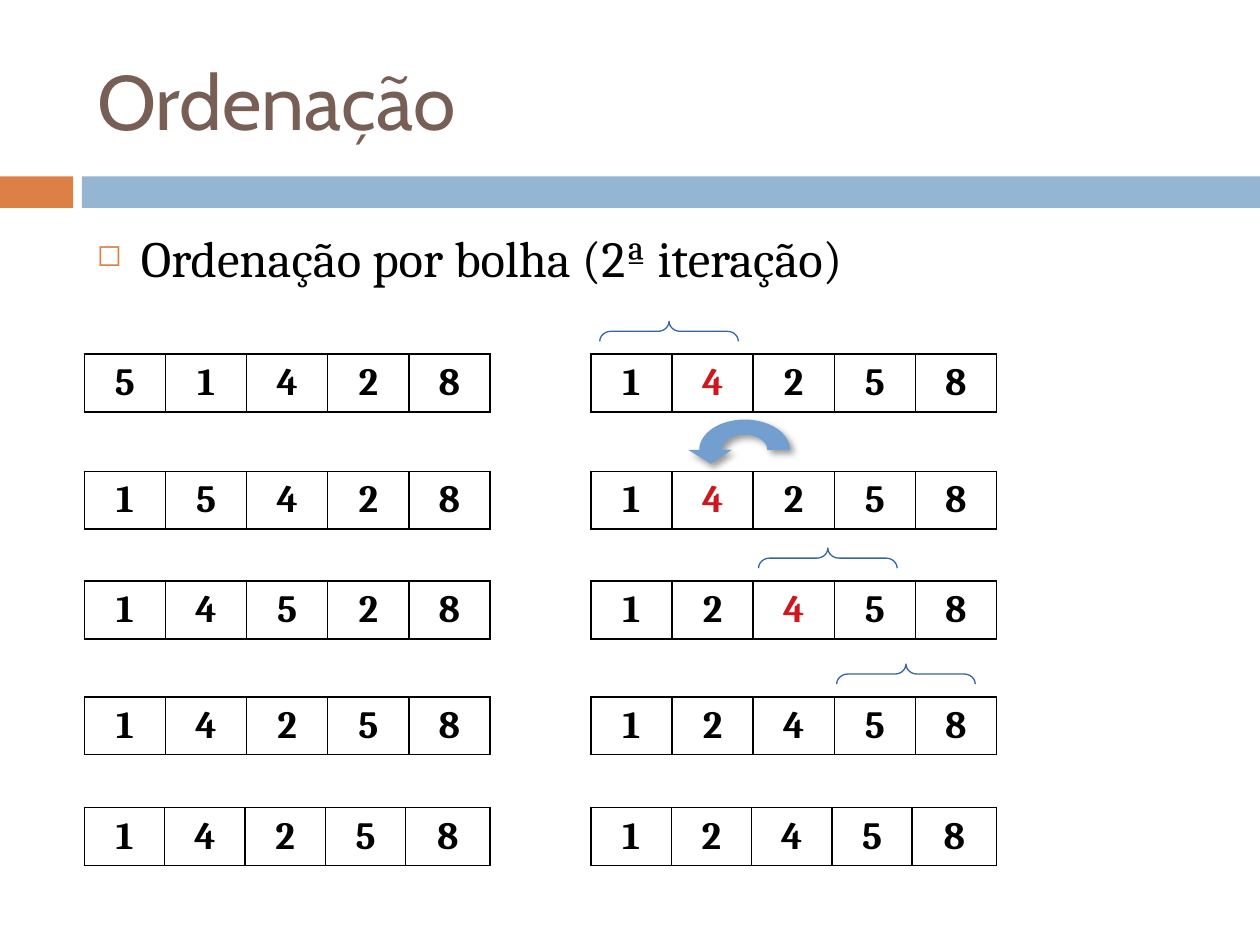
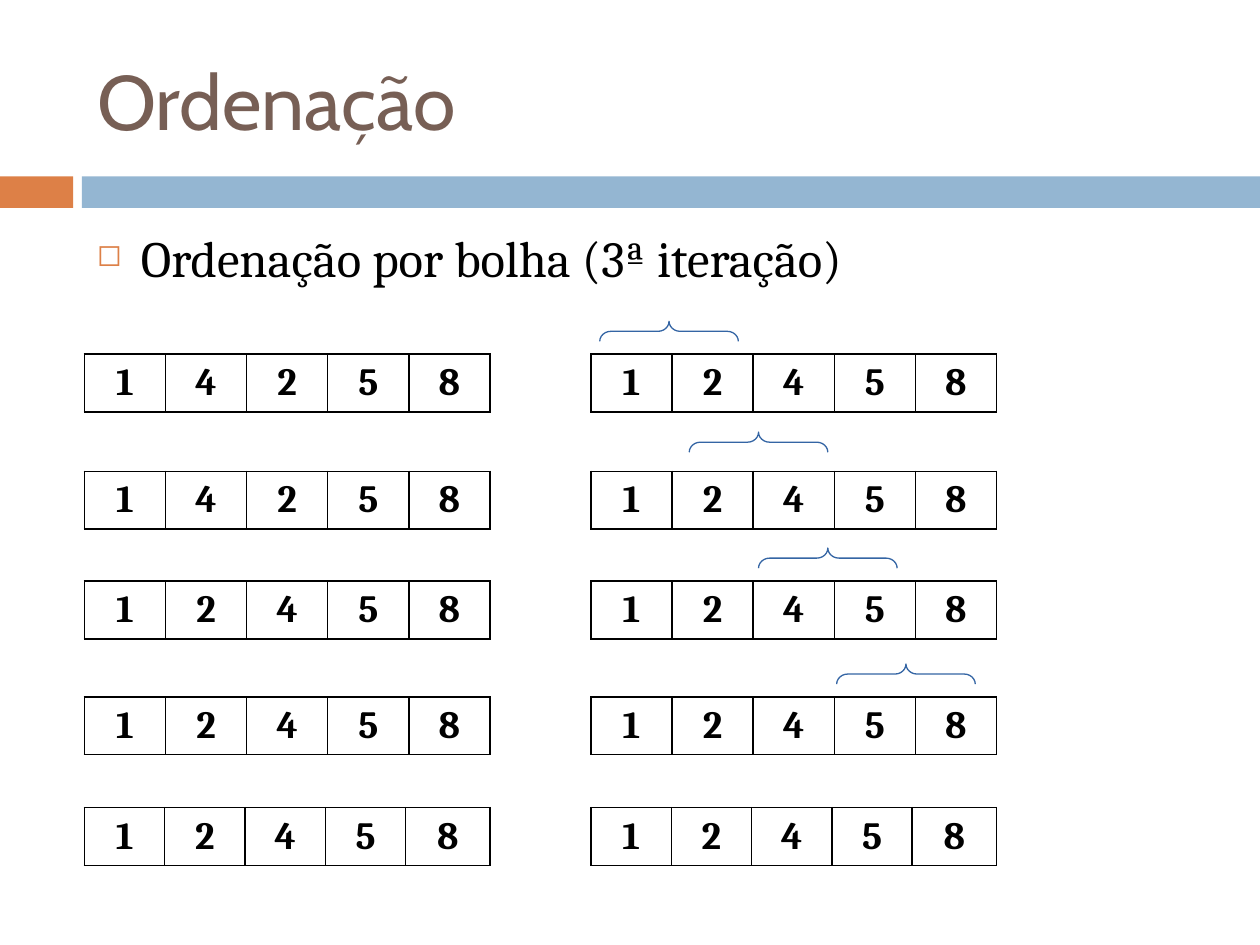
import math

from lxml import etree
from pptx import Presentation
from pptx import util as u
from pptx.dml.color import RGBColor
from pptx.enum import shapes, text
from pptx.oxml import parse_xml
from pptx.oxml.ns import nsdecls, qn

COLORS = {
    "title": "775F55", "accent": "DD8047", "band": "94B6D2", "ink": "000000",
    "moving": "CE181E", "brace": "3465A4", "swap": "729FCF",
}
TITLE_FONT, BODY_FONT = "Cabin", "Cambria"

# Each box is left, top, width, height in inches
TITLE_BOX = (0.67, 0.25, 8.92, 1.08)
BAND_BOX = (0, 1.4, 10, 0.25)
SUBJECT_BOX = (0.67, 1.75, 8.92, 5.23)
BEFORE_BOX = (0.67, 2.81, 3.22, 0.46)
AFTER_BOX = (4.69, 2.81, 3.22, 0.46)

STEP_OFFSETS = (0, 0.93, 1.8, 2.72, 3.6)
BRACE_OFFSETS = ((0.07, -0.26), (0.78, 0.62), (1.33, 1.54), (1.95, 2.46))

# Arrays are strings of digits; "moving" maps a step to its red column
ITERATIONS = (
    {
        "subject": "Ordenação por bolha (2ª iteração)",
        "before": ("51428", "15428", "14528", "14258", "14258"),
        "after": ("14258", "14258", "12458", "12458", "12458"),
        "moving": {0: 1, 1: 1, 2: 2},
        "braces": (0, 2, 3),
        "swap": (0.77, 0.52),
    },
    {
        "subject": "Ordenação por bolha (3ª iteração)",
        "before": ("14258", "14258", "12458", "12458", "12458"),
        "after": ("12458",) * 5,
        "moving": {},
        "braces": (0, 1, 2, 3),
        "swap": None,
    },
)


def rgb(name):
    return RGBColor.from_string(COLORS[name])


def inches(box):
    return [u.Inches(value) for value in box]


def write(frame, content, size, font=BODY_FONT, color="ink", bold=False,
          align=text.PP_ALIGN.LEFT, anchor=text.MSO_ANCHOR.TOP):
    """Fill a text frame with one formatted paragraph and return it."""
    frame.word_wrap = True
    frame.vertical_anchor = anchor
    paragraph = frame.paragraphs[0]
    paragraph.alignment = align
    run = paragraph.add_run()
    run.text = content
    run.font.size = u.Pt(size)
    run.font.name = font
    run.font.bold = bold
    run.font.color.rgb = rgb(color)
    return paragraph


def paint(shape, color):
    shape.shadow.inherit = False
    shape.fill.solid()
    shape.fill.fore_color.rgb = rgb(color)
    shape.line.fill.background()


def add_title(slide, box):
    title = slide.shapes.title
    title.left, title.top, title.width, title.height = inches(box)
    title.text_frame.auto_size = text.MSO_AUTO_SIZE.NONE
    write(title.text_frame, "Ordenação", 44, font=TITLE_FONT, color="title",
          anchor=text.MSO_ANCHOR.MIDDLE)


def add_bands(slide, box):
    left, top, width, height = box
    tab, gap = 0.58, 0.07
    rest = tab + gap
    for offset, length, color in ((0, tab, "accent"), (rest, width - rest, "band")):
        band = slide.shapes.add_shape(
            shapes.MSO_SHAPE.RECTANGLE, *inches((left + offset, top, length, height)))
        paint(band, color)


def add_subject(slide, box, content):
    """Place the bulleted line that names the iteration."""
    text_box = slide.shapes.add_textbox(*inches(box))
    paragraph = write(text_box.text_frame, content, 29)
    paragraph.space_before = u.Pt(7)
    properties = paragraph._p.get_or_add_pPr()
    indent = u.Inches(0.35)
    properties.set("marL", str(indent))
    properties.set("indent", str(-indent))
    color = etree.SubElement(properties, qn("a:buClr"))
    etree.SubElement(color, qn("a:srgbClr"), val=COLORS["accent"])
    etree.SubElement(properties, qn("a:buSzPct"), val="60000")
    etree.SubElement(properties, qn("a:buChar"), char="◻")


def add_borders(cell):
    properties = cell._tc.get_or_add_tcPr()
    for side in ("lnL", "lnR", "lnT", "lnB"):
        line = etree.SubElement(properties, qn("a:" + side), w=str(u.Pt(1)))
        fill = etree.SubElement(line, qn("a:solidFill"))
        etree.SubElement(fill, qn("a:srgbClr"), val=COLORS["ink"])


def add_array(slide, box, digits, last_width, moving=None):
    """Draw one array as a table of a single row."""
    table = slide.shapes.add_table(1, len(digits), *inches(box)).table
    table.first_row = table.horz_banding = False
    cell_width = (box[2] - last_width) / (len(digits) - 1)
    for column, digit in enumerate(digits):
        is_last = column == len(digits) - 1
        table.columns[column].width = u.Inches(last_width if is_last else cell_width)
        cell = table.cell(0, column)
        cell.margin_top = cell.margin_bottom = u.Inches(0.02)
        cell.vertical_anchor = text.MSO_ANCHOR.MIDDLE
        add_borders(cell)
        cell.fill.background()
        write(cell.text_frame, digit, 22, bold=True, align=text.PP_ALIGN.CENTER,
              color="moving" if column == moving else "ink",
              anchor=text.MSO_ANCHOR.MIDDLE)


def add_steps(slide, box, arrays, moving):
    """Stack the arrays of one column."""
    left, top, width, height = box
    for step, (digits, offset) in enumerate(zip(arrays, STEP_OFFSETS)):
        last_width = 0.67 if step == len(arrays) - 1 else width / len(digits)
        add_array(slide, (left, top + offset, width, height), digits, last_width,
                  moving.get(step))


def add_brace(slide, left, top):
    """Lay a brace on its side over the pair being compared."""
    length, depth = 1.1, 0.16
    shift = (length - depth) / 2
    brace = slide.shapes.add_shape(
        shapes.MSO_SHAPE.LEFT_BRACE, *inches((left + shift, top - shift, depth, length)))
    brace.rotation = 90
    brace.adjustments[0] = 0.55
    brace.shadow.inherit = False
    brace.fill.background()
    brace.line.color.rgb = rgb("brace")
    brace.line.width = u.Pt(0)


def half_ellipse(center_x, base, radius_x, radius_y, steps=32):
    """Points over the top, from left to right."""
    angles = [math.pi * (1 - step / steps) for step in range(steps + 1)]
    return [(center_x + radius_x * math.cos(angle), base - radius_y * math.sin(angle))
            for angle in angles]


def add_swap_arrow(slide, left, top):
    """Draw the curved arrow of a swap, pointing down on the left."""
    center_x, base = left + 0.45, top + 0.24
    inner = half_ellipse(center_x, base, 0.18, 0.12)
    outer = half_ellipse(center_x, base, 0.36, 0.24)
    head = [(left, base), (left + 0.18, base + 0.11), (left + 0.35, base)]
    # The builder rounds its points, so they are given in whole EMU
    points = [inches(point) for point in inner + outer[::-1] + head]
    builder = slide.shapes.build_freeform(*points[0])
    builder.add_line_segments(points[1:], close=True)
    arrow = builder.convert_to_shape()
    paint(arrow, "swap")
    effects = arrow._element.spPr.find(qn("a:effectLst"))
    effects.append(parse_xml(
        f'<a:outerShdw {nsdecls("a")} blurRad="{u.Pt(4)}" dist="{u.Pt(3)}" dir="2700000">'
        f'<a:srgbClr val="{COLORS["ink"]}"><a:alpha val="40000"/></a:srgbClr>'
        '</a:outerShdw>'))


def add_marks(slide, box, braces, swap):
    """Mark the comparisons and the swap over a column of arrays."""
    left, top = box[:2]
    if swap:
        add_swap_arrow(slide, left + swap[0], top + swap[1])
    for step in braces:
        offset_x, offset_y = BRACE_OFFSETS[step]
        add_brace(slide, left + offset_x, top + offset_y)


def add_iteration_slide(presentation, iteration):
    slide = presentation.slides.add_slide(presentation.slide_layouts[5])
    add_bands(slide, BAND_BOX)
    add_title(slide, TITLE_BOX)
    add_subject(slide, SUBJECT_BOX, iteration["subject"])
    add_steps(slide, BEFORE_BOX, iteration["before"], {})
    add_steps(slide, AFTER_BOX, iteration["after"], iteration["moving"])
    add_marks(slide, AFTER_BOX, iteration["braces"], iteration["swap"])


def main():
    presentation = Presentation()
    presentation.slide_width = u.Inches(10)
    presentation.slide_height = u.Inches(7.5)
    for iteration in ITERATIONS:
        add_iteration_slide(presentation, iteration)
    presentation.save("out.pptx")


if __name__ == "__main__":
    main()
